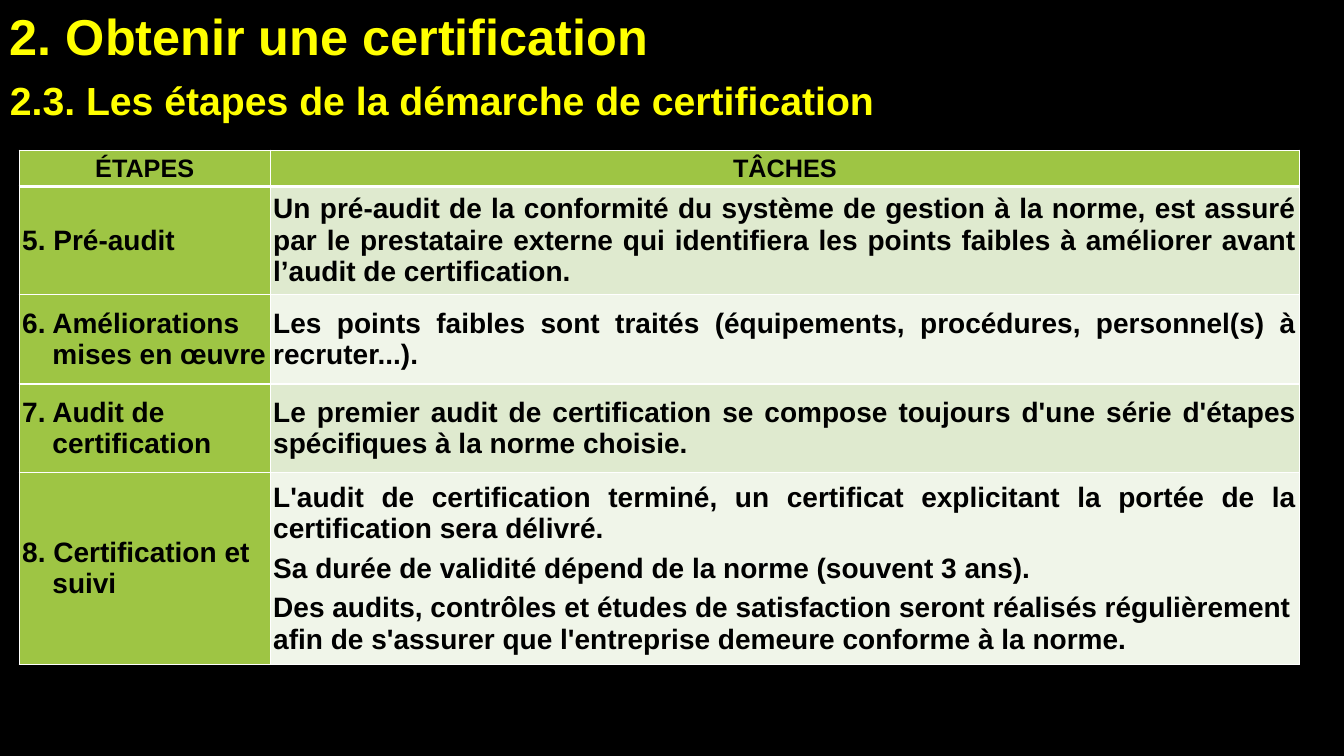
from dataclasses import dataclass

from lxml import etree
from pptx import Presentation
from pptx.dml.color import RGBColor
from pptx.enum.text import MSO_ANCHOR, MSO_AUTO_SIZE, PP_ALIGN
from pptx.oxml.ns import qn
from pptx.util import Inches, Pt

LEFT, CENTER, JUSTIFY = PP_ALIGN.LEFT, PP_ALIGN.CENTER, PP_ALIGN.JUSTIFY
MIDDLE = MSO_ANCHOR.MIDDLE
FIT_SHAPE = MSO_AUTO_SIZE.SHAPE_TO_FIT_TEXT


@dataclass(frozen=True)
class Theme:
    font: str = "Arial"
    background: str = "000000"
    heading: str = "FFFF00"
    text: str = "000000"
    border: str = "FFFFFF"
    step_fill: str = "9EC544"
    bands: tuple = ("DFEACF", "F0F5E9")
    title_size: int = 36
    subtitle_size: int = 28
    header_size: int = 18
    body_size: int = 20


THEME = Theme()
COLUMN_WIDTHS = (2.49, 10.21)
ROW_HEIGHTS = (0.36, 1.07, 0.89, 0.88, 1.9)
HEADERS = ("ÉTAPES", "TÂCHES")
# Each step: its name, then its tasks as (text, alignment)
STEPS = (
    ("5. Pré-audit", (
        ("Un pré-audit de la conformité du système de gestion à la norme, est assuré par le "
         "prestataire externe qui identifiera les points faibles à améliorer avant l’audit "
         "de certification.", JUSTIFY),)),
    ("6. Améliorations mises en œuvre", (
        ("Les points faibles sont traités (équipements, procédures, personnel(s) à "
         "recruter...).", JUSTIFY),)),
    ("7. Audit de certification", (
        ("Le premier audit de certification se compose toujours d'une série d'étapes "
         "spécifiques à la norme choisie.", JUSTIFY),)),
    ("8. Certification et suivi", (
        ("L'audit de certification terminé, un certificat explicitant la portée de la "
         "certification sera délivré.", JUSTIFY),
        ("Sa durée de validité dépend de la norme (souvent 3 ans).", JUSTIFY),
        ("Des audits, contrôles et études de satisfaction seront réalisés régulièrement "
         "afin de s'assurer que l'entreprise demeure conforme à la norme.", LEFT))),
)


def style_paragraph(p, text, size, color, align=LEFT, before=0, after=0):
    p.text = text
    p.alignment = align
    p.space_before, p.space_after = Pt(before), Pt(after)
    p.font.name, p.font.size, p.font.bold = THEME.font, Pt(size), True
    p.font.color.rgb = RGBColor.from_string(color)


def add_heading(slide, text, top, width, height, size, spacing=0, wrap=True):
    box = slide.shapes.add_textbox(0, Inches(top), Inches(width), Inches(height))
    tf = box.text_frame
    tf.word_wrap = wrap
    tf.auto_size = FIT_SHAPE
    style_paragraph(tf.paragraphs[0], text, size, THEME.heading,
                    before=spacing, after=spacing)


def set_borders(cell, top, bottom):
    """Draw the four cell borders, with top and bottom widths in points."""
    tc_pr = cell._tc.get_or_add_tcPr()
    for side, width in (("L", 1), ("R", 1), ("T", top), ("B", bottom)):
        ln = etree.SubElement(tc_pr, qn(f"a:ln{side}"), w=str(Pt(width)))
        fill = etree.SubElement(ln, qn("a:solidFill"))
        etree.SubElement(fill, qn("a:srgbClr"), val=THEME.border)


def fill_cell(cell, paragraphs, size, fill, before, after, top=1, bottom=1):
    set_borders(cell, top, bottom)
    cell.fill.solid()
    cell.fill.fore_color.rgb = RGBColor.from_string(fill)
    cell.vertical_anchor = MIDDLE
    cell.margin_left = cell.margin_right = Inches(0.03)
    cell.margin_top = cell.margin_bottom = 0
    tf = cell.text_frame
    for i, (text, align) in enumerate(paragraphs):
        p = tf.add_paragraph() if i else tf.paragraphs[0]
        style_paragraph(p, text, size, THEME.text, align, before, after)


def set_hanging_indent(p, indent):
    p_pr = p._p.get_or_add_pPr()
    p_pr.set("marL", str(Inches(indent)))
    p_pr.set("indent", str(Inches(-indent)))


def add_steps_table(slide):
    frame = slide.shapes.add_table(
        len(ROW_HEIGHTS), len(COLUMN_WIDTHS), Inches(0.19), Inches(1.49),
        Inches(sum(COLUMN_WIDTHS)), Inches(sum(ROW_HEIGHTS)))
    table = frame.table
    for column, width in zip(table.columns, COLUMN_WIDTHS):
        column.width = Inches(width)
    for row, height in zip(table.rows, ROW_HEIGHTS):
        row.height = Inches(height)

    for col, header in enumerate(HEADERS):
        fill_cell(table.cell(0, col), [(header, CENTER)], THEME.header_size,
                  THEME.step_fill, before=6, after=0, bottom=3)
    for row, (step, tasks) in enumerate(STEPS, start=1):
        band = THEME.bands[(row - 1) % 2]
        contents = (([(step, LEFT)], THEME.step_fill), (tasks, band))
        for col, (paragraphs, fill) in enumerate(contents):
            fill_cell(table.cell(row, col), paragraphs, THEME.body_size, fill,
                      before=3, after=3, top=3 if row == 1 else 1)
        set_hanging_indent(table.cell(row, 0).text_frame.paragraphs[0], 0.3)


def main():
    prs = Presentation()
    prs.slide_width, prs.slide_height = Inches(13.33), Inches(7.5)
    slide = prs.slides.add_slide(prs.slide_layouts[6])
    slide.background.fill.solid()
    slide.background.fill.fore_color.rgb = RGBColor.from_string(THEME.background)
    add_heading(slide, "2. Obtenir une certification", 0, 7.88, 0.71,
                THEME.title_size, spacing=3)
    add_steps_table(slide)
    add_heading(slide, "2.3. Les étapes de la démarche de certification", 0.71, 9.13, 0.57,
                THEME.subtitle_size, wrap=False)
    prs.save("out.pptx")


if __name__ == "__main__":
    main()
